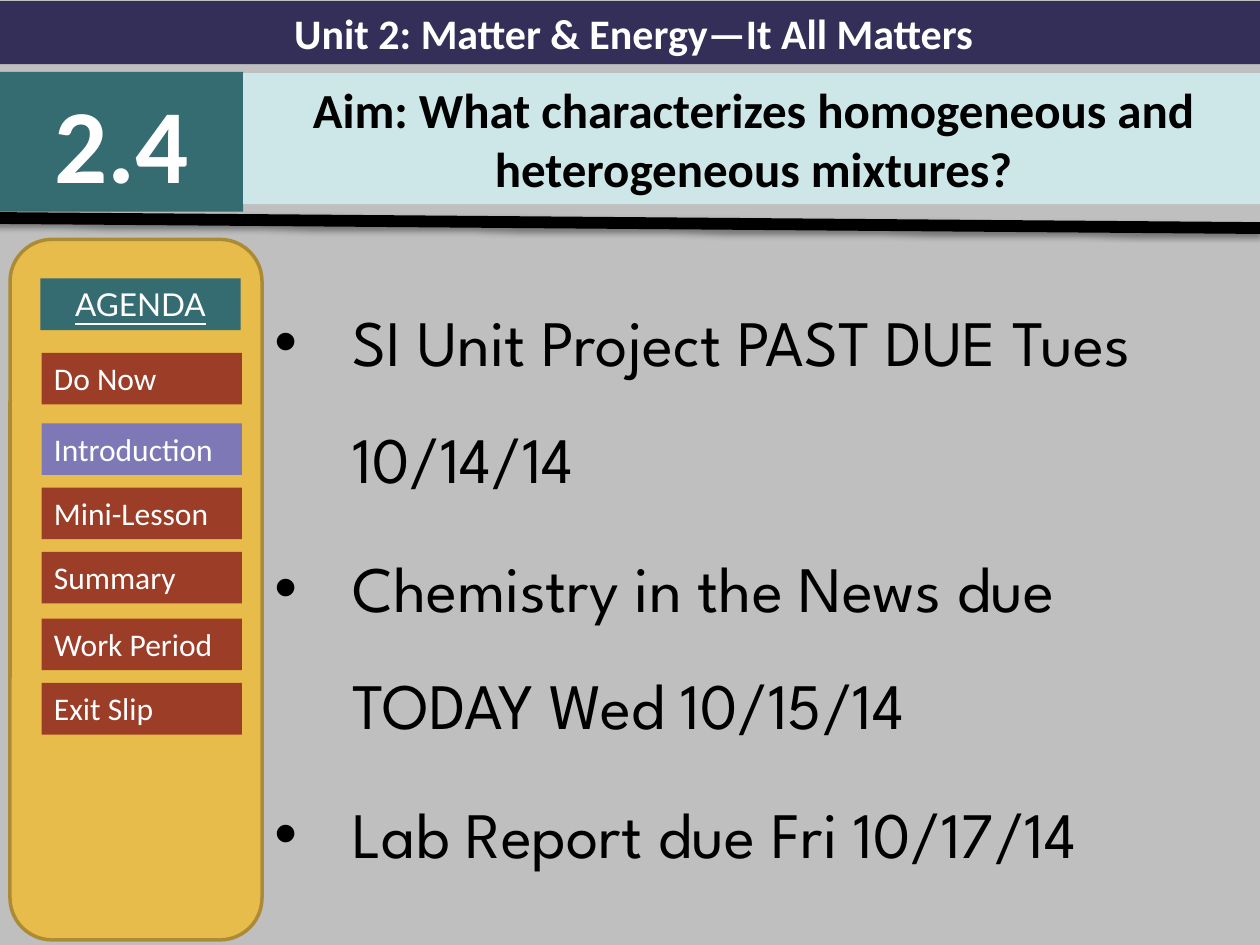
from dataclasses import dataclass

from lxml import etree
from pptx import Presentation
from pptx import util as u
from pptx.dml.color import RGBColor
from pptx.enum import shapes, text
from pptx.oxml.ns import qn

TEAL, RUST, LILAC, WHITE, BLACK = "346C71", "9C3D28", "7E78B7", "FFFFFF", "000000"


@dataclass
class Label:
    wording: str
    left: float
    top: float
    width: float
    height: float
    fill: str
    size: float = 18
    color: str = WHITE
    font: str = "Calibri"
    bold: bool = False
    underline: bool = False
    centered: bool = True


def rgb(value: str) -> RGBColor:
    return RGBColor.from_string(value)


def add_block(slide, kind, left: float, top: float, width: float, height: float, fill: str):
    shape = slide.shapes.add_shape(
        kind, u.Inches(left), u.Inches(top), u.Inches(width), u.Inches(height))
    shape.shadow.inherit = False
    shape.fill.solid()
    shape.fill.fore_color.rgb = rgb(fill)
    shape.line.fill.background()
    return shape


def add_run(paragraph, wording: str, font: str, size: float, color: str):
    run = paragraph.add_run()
    run.text = wording
    run.font.name = font
    run.font.size = u.Pt(size)
    run.font.color.rgb = rgb(color)
    return run


def add_label(slide, label: Label) -> None:
    shape = add_block(slide, shapes.MSO_SHAPE.RECTANGLE, label.left, label.top,
                      label.width, label.height, label.fill)
    frame = shape.text_frame
    frame.word_wrap = True
    frame.auto_size = text.MSO_AUTO_SIZE.SHAPE_TO_FIT_TEXT
    frame.vertical_anchor = text.MSO_ANCHOR.TOP
    paragraph = frame.paragraphs[0]
    paragraph.alignment = text.PP_ALIGN.CENTER if label.centered else text.PP_ALIGN.LEFT
    run = add_run(paragraph, label.wording, label.font, label.size, label.color)
    run.font.bold = label.bold
    run.font.underline = label.underline


def add_bullets(slide, items: list[str]) -> None:
    box = slide.shapes.add_textbox(
        u.Inches(2.08), u.Inches(2.04), u.Inches(7.92), u.Inches(5.46))
    frame = box.text_frame
    frame.word_wrap = True
    for index, item in enumerate(items):
        paragraph = frame.add_paragraph() if index else frame.paragraphs[0]
        paragraph.line_spacing = 1.5
        paragraph.space_before = u.Pt(7.4)
        properties = paragraph._p.get_or_add_pPr()
        properties.set("marL", str(u.Inches(0.62)))
        properties.set("indent", str(-u.Inches(0.62)))
        etree.SubElement(properties, qn("a:buFont"), typeface="Arial")
        etree.SubElement(properties, qn("a:buChar"), char="•")
        add_run(paragraph, item, "League Spartan", 37, BLACK)


def add_divider(slide) -> None:
    line = slide.shapes.add_connector(
        shapes.MSO_CONNECTOR.STRAIGHT,
        u.Inches(-0.05), u.Inches(1.73), u.Inches(10), u.Inches(1.81))
    line.line.color.rgb = rgb(BLACK)
    line.line.width = u.Pt(6.75)
    effects = etree.SubElement(line._element.spPr, qn("a:effectLst"))
    shadow = etree.SubElement(
        effects, qn("a:outerShdw"), blurRad=str(u.Pt(3.1)), dist=str(u.Pt(1.6)),
        dir="5400000", rotWithShape="0")
    color = etree.SubElement(shadow, qn("a:srgbClr"), val=BLACK)
    etree.SubElement(color, qn("a:alpha"), val="38000")


def main() -> None:
    presentation = Presentation()
    presentation.slide_width = u.Inches(10)
    presentation.slide_height = u.Inches(7.5)
    slide = presentation.slides.add_slide(presentation.slide_layouts[6])
    slide.background.fill.solid()
    slide.background.fill.fore_color.rgb = rgb("BFBFBF")

    # Announcements
    add_bullets(slide, [
        "SI Unit Project PAST DUE Tues 10/14/14",
        "Chemistry in the News due TODAY Wed 10/15/14",
        "Lab Report due Fri 10/17/14",
    ])

    # Header
    for label in (
        Label("Unit 2: Matter & Energy—It All Matters",
              0, 0.01, 10.06, 0.5, "342F59", 24, bold=True),
        Label("2.4", 0, 0.57, 1.93, 1.11, TEAL, 60, bold=True),
        Label("Aim: What characterizes homogeneous and heterogeneous mixtures?",
              1.93, 0.58, 8.1, 1.04, "CDE6E8", 28, BLACK, bold=True),
    ):
        add_label(slide, label)
    add_divider(slide)

    # Agenda panel
    panel = add_block(slide, shapes.MSO_SHAPE.ROUNDED_RECTANGLE,
                      0.08, 1.9, 2, 5.56, "E8BC4A")
    panel.line.color.rgb = rgb("AC8B37")
    panel.line.width = u.Pt(2)
    add_label(slide, Label("AGENDA", 0.32, 2.21, 1.59, 0.41, TEAL,
                           font="Lato", underline=True))

    # Agenda steps, the current one in lilac
    for wording, top, fill in (
        ("Do Now", 2.8, RUST),
        ("Introduction", 3.36, LILAC),
        ("Mini-Lesson", 3.87, RUST),
        ("Summary", 4.38, RUST),
        ("Work Period", 4.91, RUST),
        ("Exit Slip", 5.42, RUST),
    ):
        add_label(slide, Label(wording, 0.33, top, 1.59, 0.41, fill, centered=False))

    presentation.save("out.pptx")


if __name__ == "__main__":
    main()
